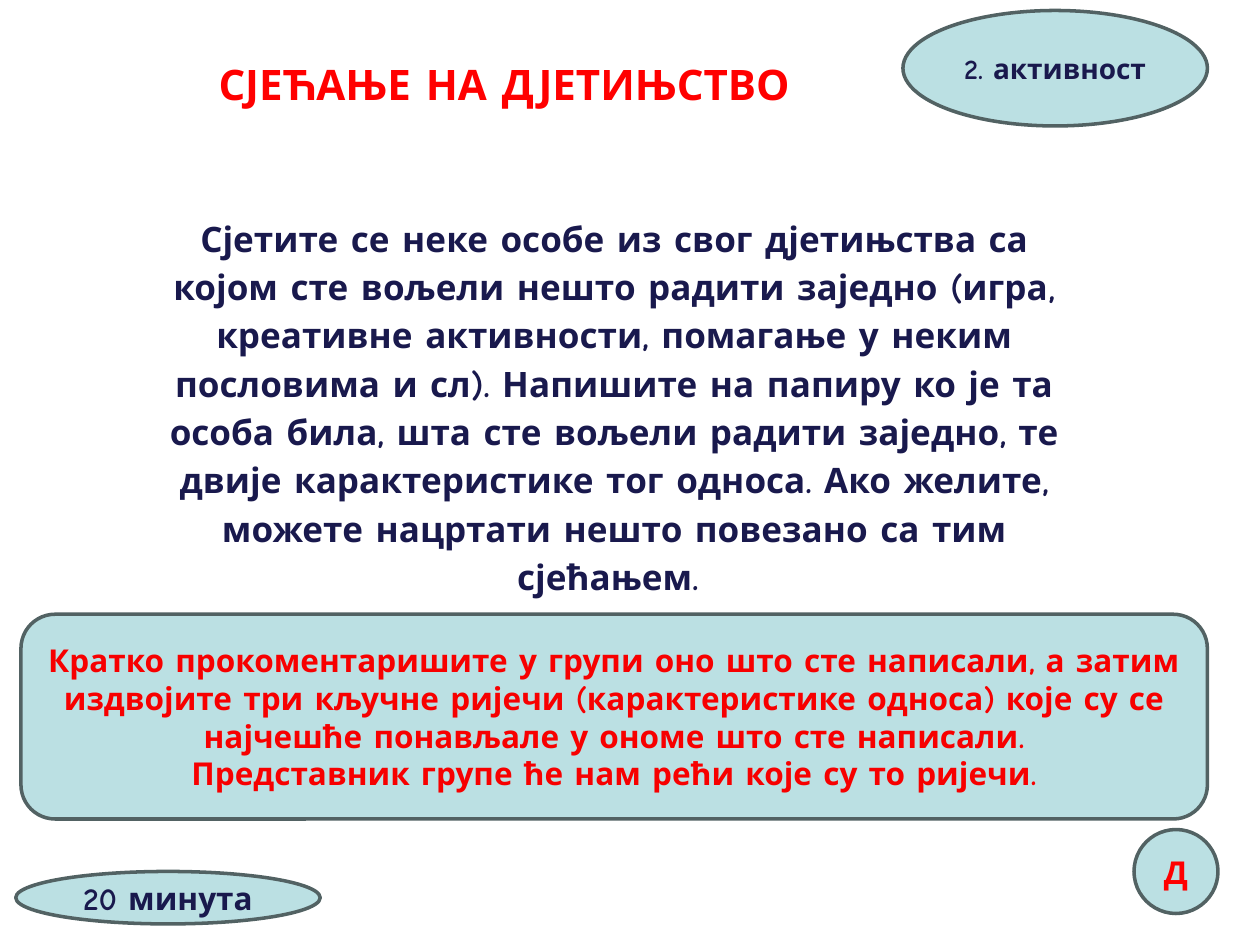
from pptx import Presentation
from pptx import util as u
from pptx.dml.color import RGBColor
from pptx.enum import shapes, text

COLUMNS, ROWS = 120, 90
NAVY, RED, DEEP_RED = "19194D", "FF0000", "F70000"
OVAL = shapes.MSO_SHAPE.OVAL
ROUNDED = shapes.MSO_SHAPE.ROUNDED_RECTANGLE


def color(code):
    return RGBColor.from_string(code)


def write(frame, *lines, size=18, ink=NAVY, spacing=None, after=None):
    frame.word_wrap = True
    for index, line in enumerate(lines):
        para = frame.paragraphs[0] if index == 0 else frame.add_paragraph()
        para.alignment = text.PP_ALIGN.CENTER
        if spacing:
            para.line_spacing = spacing
        if after:
            para.space_after = u.Pt(after)
        span = para.add_run()
        span.text = line
        span.font.name = Page.font
        span.font.size = u.Pt(size)
        span.font.bold = True
        span.font.color.rgb = color(ink)


class Page:
    font = "Comic Neue"
    fill = "BBE0E3"
    outline = "526263"

    def __init__(self, deck):
        self.slide = deck.slides.add_slide(deck.slide_layouts[6])
        self.column = deck.slide_width / COLUMNS
        self.row = deck.slide_height / ROWS

    def area(self, left, top, width, height):
        """Turn grid columns and rows into lengths."""
        return (int(left * self.column), int(top * self.row),
                int(width * self.column), int(height * self.row))

    def label(self, place, *lines, **style):
        box = self.slide.shapes.add_textbox(*self.area(*place))
        write(box.text_frame, *lines, **style)

    def bubble(self, kind, place, *lines, **style):
        box = self.slide.shapes.add_shape(kind, *self.area(*place))
        box.shadow.inherit = False
        box.fill.solid()
        box.fill.fore_color.rgb = color(self.fill)
        box.line.color.rgb = color(self.outline)
        box.line.width = u.Pt(2)
        box.text_frame.vertical_anchor = text.MSO_ANCHOR.MIDDLE
        write(box.text_frame, *lines, **style)


def main():
    deck = Presentation()
    deck.slide_width, deck.slide_height = u.Inches(10), u.Inches(7.5)
    page = Page(deck)

    page.label(
        (14, 19.5, 89, 34),
        "Сјетите се неке особе из свог дјетињства са којом сте вољели нешто "
        "радити заједно (игра, креативне активности, помагање у неким "
        "пословима и сл). Напишите на папиру ко је та особа била, шта сте "
        "вољели радити заједно, те двије карактеристике тог односа. Ако "
        "желите, можете нацртати нешто повезано са тим сјећањем. ",
        size=20, spacing=1.15, after=10)
    page.bubble(OVAL, (1.5, 83, 29, 5), "20 минута")
    page.bubble(OVAL, (108, 79, 8, 8), "Д", ink=RED)
    page.bubble(OVAL, (86, 1, 29, 11), "2. активност", size=16)
    page.label((16, 5, 64, 6), "СЈЕЋАЊЕ НА ДЈЕТИЊСТВО", size=24, ink=RED)
    page.bubble(
        ROUNDED, (2, 58.5, 113, 19.5),
        "Кратко прокоментаришите у групи оно што сте написали, а затим "
        "издвојите три кључне ријечи (карактеристике односа) које су се "
        "најчешће понављале у ономе што сте написали.",
        "Представник групе ће нам рећи које су то ријечи.",
        ink=DEEP_RED)

    deck.save("out.pptx")


if __name__ == "__main__":
    main()
